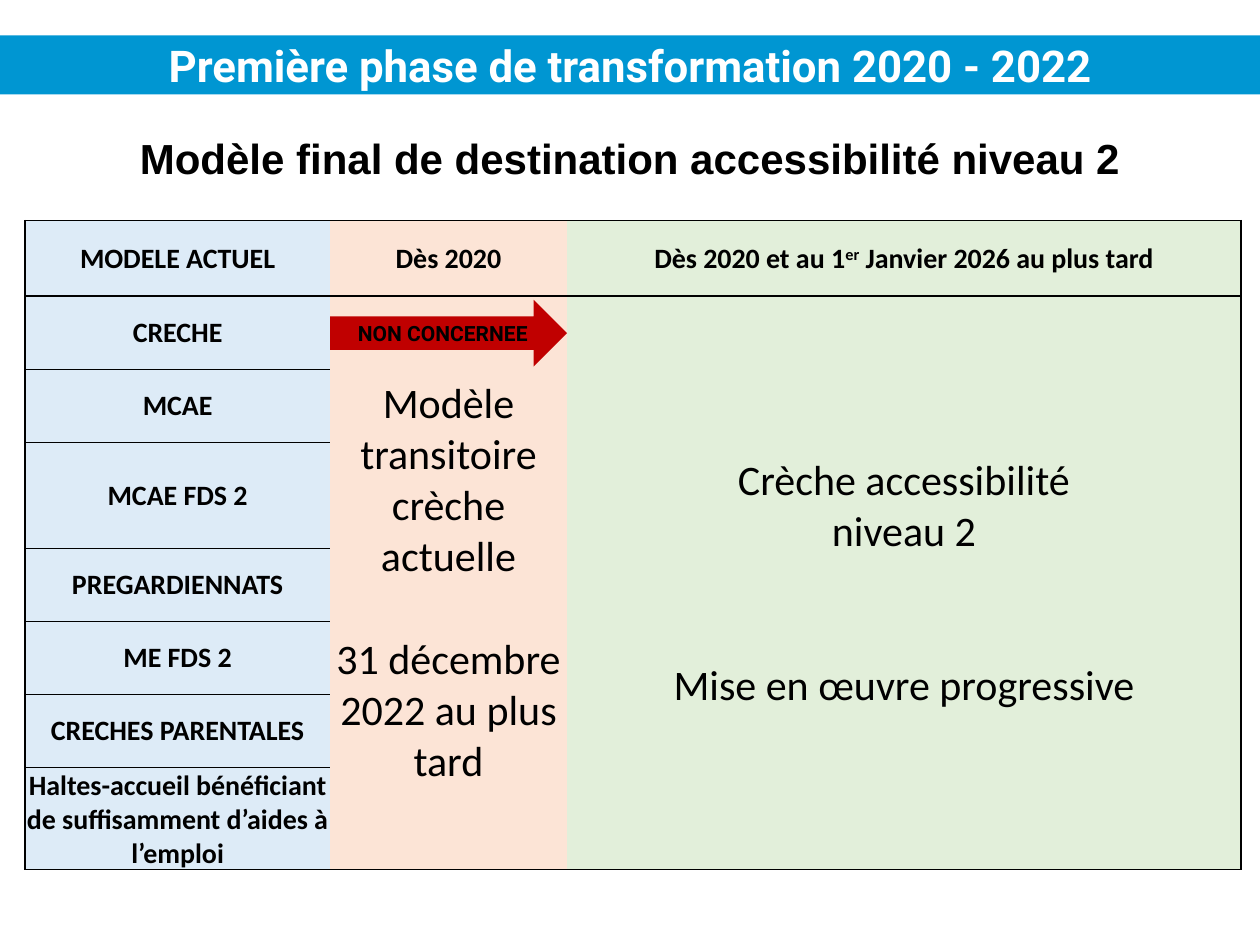
from dataclasses import dataclass

from lxml.etree import SubElement
from pptx import Presentation
from pptx.dml.color import RGBColor
from pptx.enum.shapes import MSO_SHAPE
from pptx.enum.text import MSO_ANCHOR, MSO_AUTO_SIZE, PP_ALIGN
from pptx.oxml.ns import qn
from pptx.util import Inches, Pt

COLORS = {
    "banner": "0096D2", "white": "FFFFFF", "black": "000000", "arrow": "C00000",
    "current": "DDEBF7", "transition": "FCE4D6", "final": "E2EFDA",
}
WIDTH, HEIGHT = Inches(10), Inches(7.5)
TABLE_LEFT, TABLE_TOP = 0.2, 1.75
COLS = [2.42, 1.88, 5.35]
ROWS = [0.6, 0.58, 0.58, 0.84, 0.58, 0.58, 0.58, 0.8]
NO_STYLE = "{2D5ABB26-0587-4C30-8999-92F81FD0307C}"
LINE = 29.3  # height of one 24 pt line, in points


@dataclass
class Run:
    text: str
    size: float
    bold: bool = True
    font: str = "Calibri"
    color: str = "black"
    baseline: int = 0


@dataclass
class Para:
    runs: list[Run]
    before: float = 0
    align: PP_ALIGN = PP_ALIGN.CENTER


def rgb(name: str) -> RGBColor:
    return RGBColor.from_string(COLORS[name])


def label(text: str) -> list[Para]:
    return [Para([Run(text, 16)])]


def body(text: str, before: float = 0) -> Para:
    return Para([Run(text, 24, bold=False)], before)


def write(tf, paras: list[Para]) -> None:
    tf.word_wrap = True
    for i, para in enumerate(paras):
        p = tf.paragraphs[0] if i == 0 else tf.add_paragraph()
        p.alignment = para.align
        if para.before:
            p.space_before = Pt(para.before)
        for run in para.runs:
            r = p.add_run()
            r.text = run.text
            r.font.name, r.font.size, r.font.bold = run.font, Pt(run.size), run.bold
            r.font.color.rgb = rgb(run.color)
            if run.baseline:
                r.font._element.set("baseline", str(run.baseline * 1000))


def format_cell(cell, fill: str, borders: dict[str, float]) -> None:
    """Borders map a side (L, R, T, B) to a width in points; other sides stay bare."""
    tc_pr = cell._tc.get_or_add_tcPr()
    for side in "LRTB":
        width = borders.get(side, 0)
        ln = SubElement(tc_pr, qn(f"a:ln{side}"), w=str(Pt(width)))
        if width:
            solid = SubElement(ln, qn("a:solidFill"))
            SubElement(solid, qn("a:srgbClr"), val=COLORS["black"])
        else:
            SubElement(ln, qn("a:noFill"))
    cell.fill.solid()
    cell.fill.fore_color.rgb = rgb(fill)
    cell.vertical_anchor = MSO_ANCHOR.MIDDLE
    cell.margin_left = cell.margin_right = cell.margin_top = Inches(0.01)
    cell.margin_bottom = 0


def cell_borders(row: int, col: int) -> dict[str, float]:
    last = len(ROWS) - 1
    borders = {}
    if row <= 1:
        borders["T"] = 1
    elif col == 0:
        borders["T"] = 0.5
    if row in (0, last) or (row == 1 and col > 0):
        borders["B"] = 1
    elif col == 0:
        borders["B"] = 0.5
    if col == 0:
        borders["L"] = 1
    if col == len(COLS) - 1:
        borders["R"] = 1
    return borders


def add_model_table(slide, texts: dict[tuple[int, int], list[Para]]) -> None:
    frame = slide.shapes.add_table(
        len(ROWS), len(COLS), Inches(TABLE_LEFT), Inches(TABLE_TOP),
        Inches(sum(COLS)), Inches(sum(ROWS)))
    table = frame.table
    table.first_row = table.horz_banding = False
    table._tbl.tblPr.find(qn("a:tableStyleId")).text = NO_STYLE
    for column, width in zip(table.columns, COLS):
        column.width = Inches(width)
    for row, height in zip(table.rows, ROWS):
        row.height = Inches(height)
    for row in range(len(ROWS)):
        for col, fill in enumerate(("current", "transition", "final")):
            format_cell(table.cell(row, col), fill, cell_borders(row, col))
    for col in (1, 2):
        table.cell(1, col).merge(table.cell(len(ROWS) - 1, col))
    for (row, col), paras in texts.items():
        write(table.cell(row, col).text_frame, paras)


def main() -> None:
    prs = Presentation()
    prs.slide_width, prs.slide_height = WIDTH, HEIGHT
    slide = prs.slides.add_slide(prs.slide_layouts[5])

    # Title banner
    sp = slide.shapes.title
    sp.left, sp.top, sp.width, sp.height = 0, Inches(0.28), WIDTH, Inches(0.47)
    sp.fill.solid()
    sp.fill.fore_color.rgb = rgb("banner")
    tf = sp.text_frame
    tf.auto_size = MSO_AUTO_SIZE.NONE
    tf.vertical_anchor = MSO_ANCHOR.MIDDLE
    write(tf, [Para([Run("Première phase de transformation 2020 - 2022", 25,
                         font="Roboto", color="white")])])

    # Subtitle
    sp = slide.shapes.add_textbox(0, Inches(1), WIDTH, Inches(0.5))
    write(sp.text_frame, [Para([Run("Modèle final de destination accessibilité niveau 2",
                                    24, font="Arial")])])

    # Table of current, transitional and final models
    models = ["MODELE ACTUEL", "CRECHE", "MCAE", "MCAE FDS 2", "PREGARDIENNATS",
              "ME FDS 2", "CRECHES PARENTALES",
              "Haltes-accueil bénéficiant de suffisamment d’aides à l’emploi"]
    texts = {(row, 0): label(name) for row, name in enumerate(models)}
    texts[0, 1] = label("Dès 2020")
    texts[0, 2] = [Para([Run("Dès 2020 et au 1", 16), Run("er", 16, baseline=30),
                         Run(" Janvier 2026 au plus tard", 16)])]
    texts[1, 1] = [body("Modèle transitoire crèche"), body("actuelle"),
                   body("31 décembre 2022 au plus tard", LINE)]
    texts[1, 2] = [body("Crèche accessibilité"), body("niveau 2"),
                   body("Mise en œuvre progressive", 2 * LINE)]
    add_model_table(slide, texts)

    # Arrow across the transition column
    sp = slide.shapes.add_shape(
        MSO_SHAPE.RIGHT_ARROW, Inches(TABLE_LEFT + COLS[0]),
        Inches(TABLE_TOP + ROWS[0] + 0.03), Inches(COLS[1]), Inches(0.53))
    sp.shadow.inherit = False
    sp.fill.solid()
    sp.fill.fore_color.rgb = rgb("arrow")
    sp.line.fill.background()
    tf = sp.text_frame
    tf.margin_left = Inches(0.22)
    tf.vertical_anchor = MSO_ANCHOR.MIDDLE
    write(tf, [Para([Run("NON CONCERNEE", 12, font="Roboto")], align=PP_ALIGN.LEFT)])

    prs.save("out.pptx")


if __name__ == "__main__":
    main()
